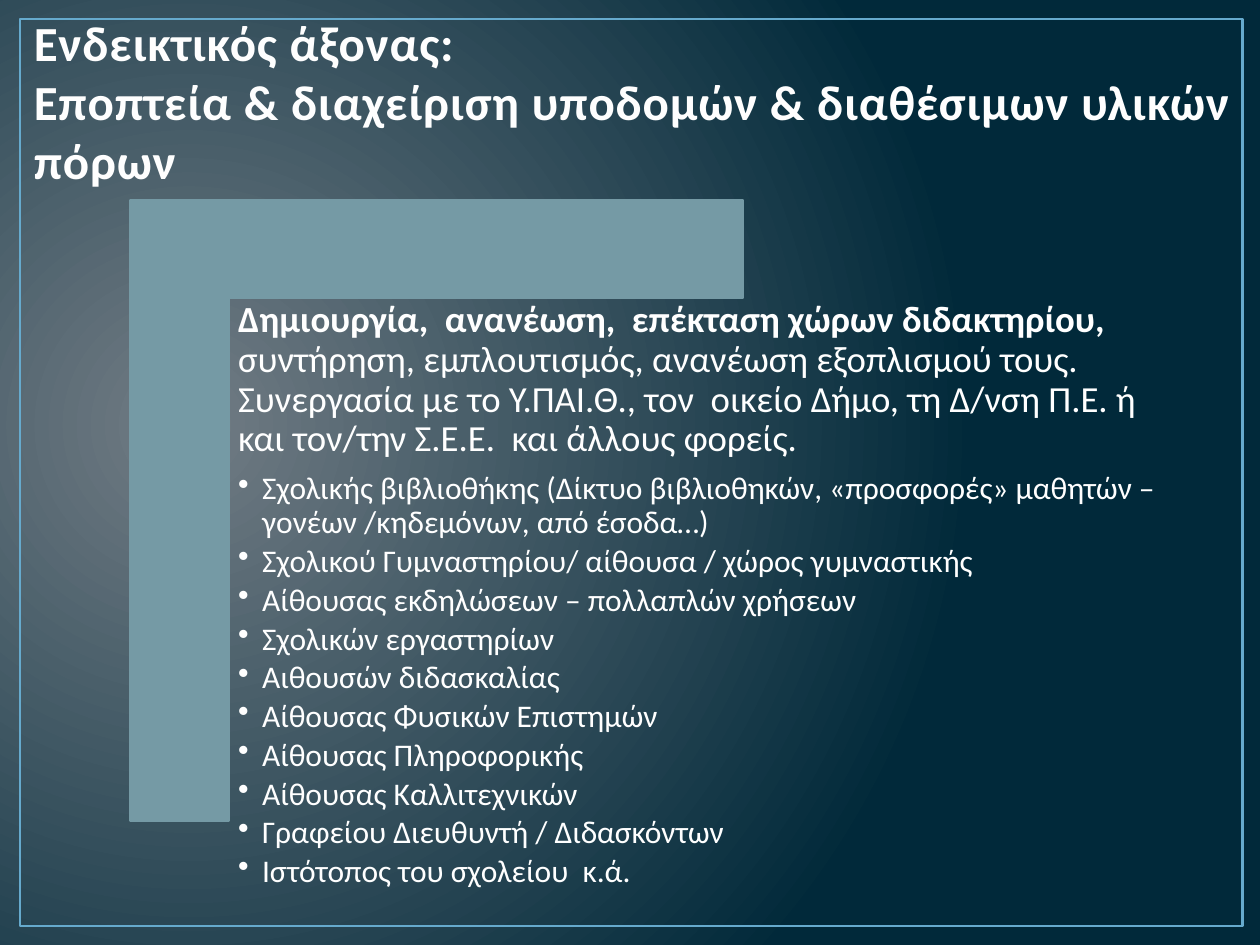
from dataclasses import dataclass
from lxml.etree import SubElement
from pptx import Presentation
from pptx.dml.color import RGBColor
from pptx.enum.shapes import MSO_SHAPE
from pptx.enum.text import MSO_ANCHOR
from pptx.oxml.ns import qn
from pptx.util import Inches, Pt

W, H = Inches(10), Inches(7.5)
FONT = "Calibri"
WHITE, TEAL, SKY = "FFFFFF", "759AA5", "66AACD"
INDENT = Inches(0.19)


@dataclass
class Box:
    x: float
    y: float
    w: float
    h: float

    def emu(self) -> list[int]:
        return [round(v * d / 100) for v, d in
                zip((self.x, self.y, self.w, self.h), (W, H, W, H))]


@dataclass
class Para:
    text: str
    lead: str = ""
    size: float = 18
    after: int = 15
    bullet: bool = True


TITLE = "Ενδεικτικός άξονας: \vΕποπτεία & διαχείριση υποδομών & διαθέσιμων υλικών πόρων"
INTRO = Para(
    "συντήρηση, εμπλουτισμός, ανανέωση εξοπλισμού τους. Συνεργασία με το Υ.ΠΑΙ.Θ., τον  οικείο Δήμο, "
    "τη Δ/νση Π.Ε. ή και τον/την Σ.Ε.Ε.  και άλλους φορείς. ",
    lead="Δημιουργία,  ανανέωση,  επέκταση χώρων διδακτηρίου, ",
    size=21, after=35, bullet=False)
FACILITIES = [
    "Σχολικής βιβλιοθήκης (Δίκτυο βιβλιοθηκών, «προσφορές» μαθητών – γονέων /κηδεμόνων, από έσοδα…)",
    "Σχολικού Γυμναστηρίου/ αίθουσα / χώρος γυμναστικής",
    "Αίθουσας εκδηλώσεων – πολλαπλών χρήσεων",
    "Σχολικών εργαστηρίων",
    "Αιθουσών διδασκαλίας",
    "Αίθουσας Φυσικών Επιστημών",
    "Αίθουσας Πληροφορικής",
    "Αίθουσας Καλλιτεχνικών",
    "Γραφείου Διευθυντή / Διδασκόντων",
    "Ιστότοπος του σχολείου  κ.ά.",
]


def rgb(color: str) -> RGBColor:
    return RGBColor.from_string(color)


def set_background(s, inner: str, outer: str) -> None:
    fill = s.background.fill
    fill.gradient()
    for stop, color, pos in zip(fill.gradient_stops, (inner, outer), (0, 1)):
        stop.color.rgb = rgb(color)
        stop.position = pos
    grad = s.element.find(".//" + qn("a:gradFill"))
    grad.remove(grad.find(qn("a:lin")))
    circle = SubElement(grad, qn("a:path"), path="circle")
    SubElement(circle, qn("a:fillToRect"), l="15000", t="50000", r="85000", b="60000")


def add_shape(s, kind, box: Box, line: str, width: float, fill: str = ""):
    sp = s.shapes.add_shape(kind, *box.emu())
    sp.shadow.inherit = False
    if fill:
        sp.fill.solid()
        sp.fill.fore_color.rgb = rgb(fill)
    else:
        sp.fill.background()
    sp.line.color.rgb = rgb(line)
    sp.line.width = Pt(width)
    return sp


def add_text(s, box: Box, anchor=MSO_ANCHOR.TOP):
    tf = s.shapes.add_textbox(*box.emu()).text_frame
    tf.word_wrap = True
    tf.vertical_anchor = anchor
    return tf


def format_font(font, size: float, color: str = WHITE, bold: bool = False) -> None:
    font.name, font.size, font.bold = FONT, Pt(size), bold
    font.color.rgb = rgb(color)


def add_title(s, box: Box, text: str) -> None:
    p = add_text(s, box, MSO_ANCHOR.BOTTOM).paragraphs[0]
    p.text = text
    for r in p.runs:
        format_font(r.font, 28, "FEFEFE", True)
        rPr = r._r.get_or_add_rPr()
        rPr.set("spc", "50")
        ln = SubElement(rPr, qn("a:ln"), w=str(Pt(1.05)))
        SubElement(SubElement(ln, qn("a:solidFill")), qn("a:srgbClr"), val="384F55")
        rPr.insert(0, ln)


def write_para(p, para: Para) -> None:
    p.line_spacing = 0.9
    pPr = p._p.get_or_add_pPr()
    aft = SubElement(pPr, qn("a:spcAft"))
    SubElement(aft, qn("a:spcPct"), val=str(para.after * 1000))
    if para.bullet:
        p.level = 1
        pPr.set("marL", str(INDENT))
        pPr.set("indent", str(-INDENT))
        SubElement(pPr, qn("a:buChar"), char="•")
    for text, bold in ((para.lead, True), (para.text, False)):
        if text:
            r = p.add_run()
            r.text = text
            format_font(r.font, para.size, bold=bold)


def add_body(s, box: Box, paras: list[Para]) -> None:
    tf = add_text(s, box)
    tf.margin_left = tf.margin_right = tf.margin_top = tf.margin_bottom = Inches(0.07)
    for i, para in enumerate(paras):
        write_para(tf.add_paragraph() if i else tf.paragraphs[0], para)


def main() -> None:
    prs = Presentation()
    prs.slide_width, prs.slide_height = W, H
    s = prs.slides.add_slide(prs.slide_layouts[6])
    set_background(s, "717C84", "01293A")
    add_shape(s, MSO_SHAPE.RECTANGLE, Box(1.6, 2, 97, 96), SKY, 1.5)
    add_title(s, Box(1.7, 0, 98.3, 20.67), TITLE)
    corner = add_shape(s, MSO_SHAPE.CORNER, Box(10, 21.6, 49.3, 64.8), TEAL, 1.25, TEAL)
    corner.rotation = 90
    corner.adjustments[0] = corner.adjustments[1] = 0.16
    add_body(s, Box(18.2, 30.93, 76.8, 69.07), [INTRO, *map(Para, FACILITIES)])
    prs.save("out.pptx")


if __name__ == "__main__":
    main()
